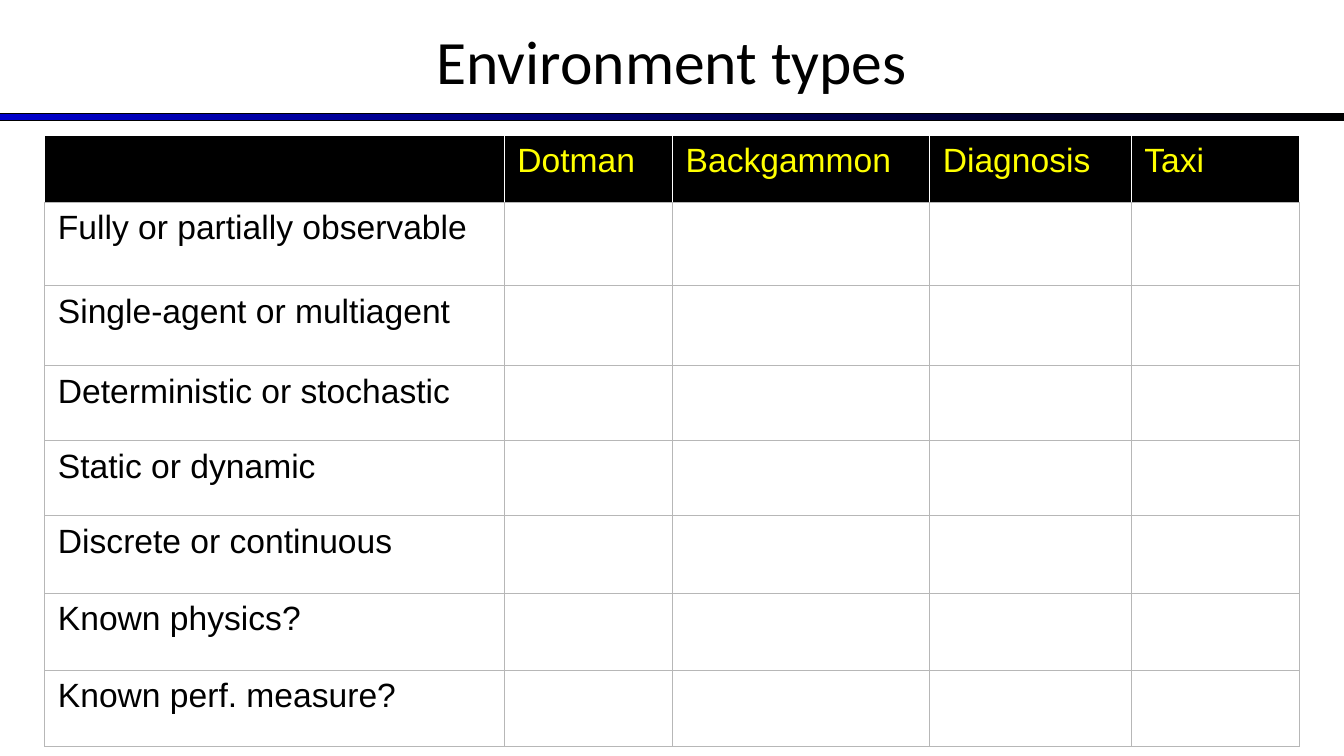
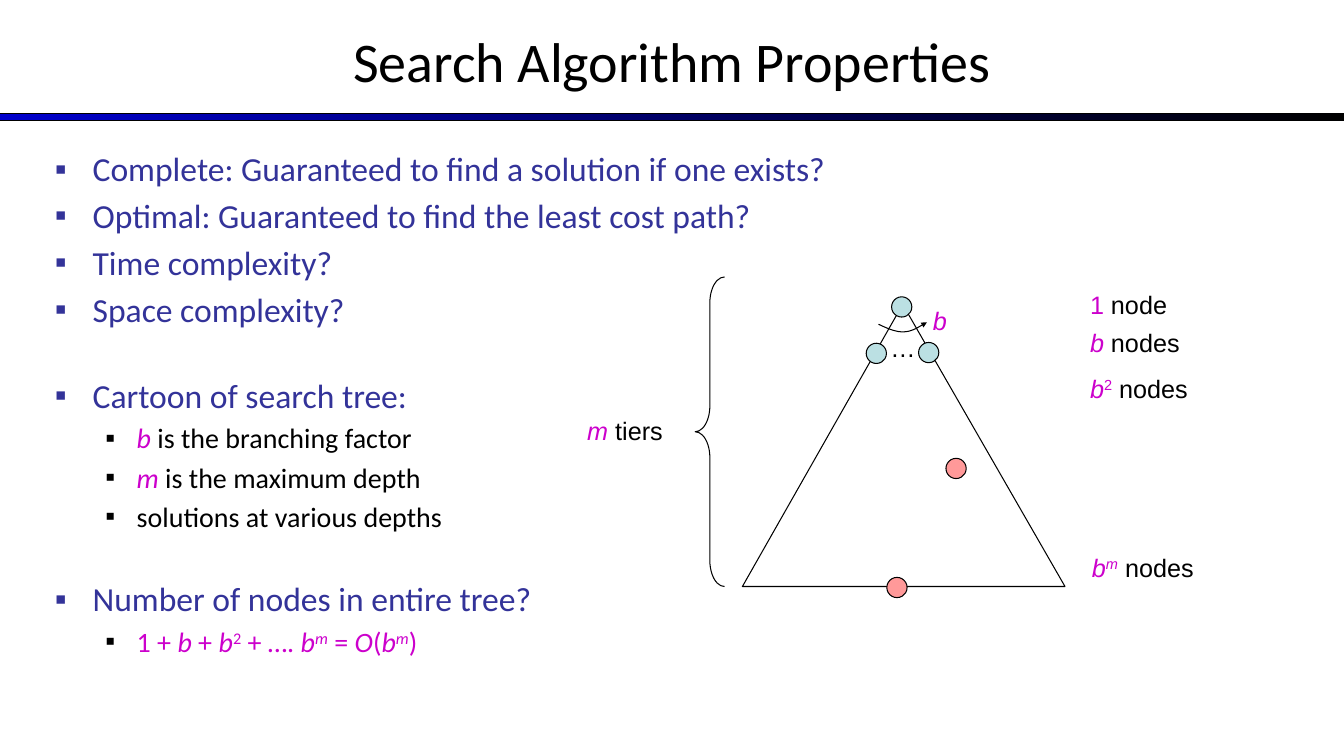
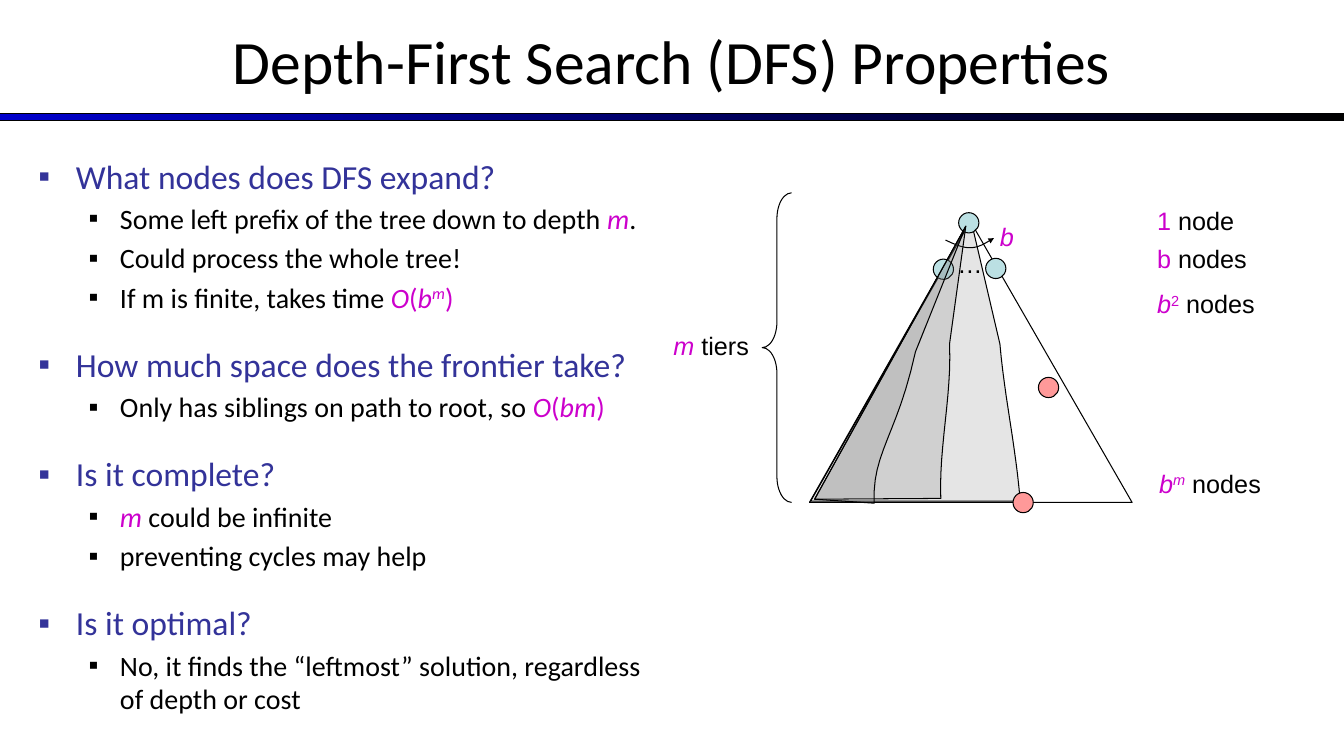
from lxml.etree import SubElement
from pptx import Presentation
from pptx.dml.color import RGBColor
from pptx.enum.shapes import MSO_SHAPE
from pptx.enum.text import MSO_ANCHOR, MSO_AUTO_SIZE, PP_ALIGN
from pptx.oxml.ns import qn
from pptx.util import Cm, Pt

COLORS = {
    "black": "000000", "white": "FFFFFF", "band": "0000CC", "grid": "B7B7B7",
    "header": "FFFF00", "heading": "333399", "math": "CC00CC",
    "node": "BBE0E3", "goal": "FF9999", "shade": "808080",
}
SLIDE_W, SLIDE_H = 33.87, 19.05

# Table: lengths in cm
TABLE_AT = (1.13, 3.41)
COLUMNS = [("", 11.58), ("Dotman", 4.24), ("Backgammon", 6.48),
           ("Diagnosis", 5.08), ("Taxi", 4.23)]
HEADER_H = 1.69
ROWS = [
    ("Fully or partially observable", 2.1),
    ("Single-agent or multiagent", 2.01),
    ("Deterministic or stochastic", 1.89),
    ("Static or dynamic", 1.89),
    ("Discrete or continuous", 1.96),
    ("Known physics?", 1.94),
    ("Known perf. measure?", 1.93),
]

# A run is plain text or (text, flags): m = math colour, i = italic, s = superscript
B, M = ("b", "mi"), ("m", "mi")
SQUARED, TO_THE_M = ("2", "ms"), ("m", "mis")
BIG_O, OPEN, CLOSE = ("O", "mi"), ("(", "m"), (")", "m")

# Lists: groups of (level, runs)
SEARCH_LIST = [
    [(0, ["Complete: Guaranteed to find a solution if one exists?"]),
     (0, ["Optimal: Guaranteed to find the least cost path?"]),
     (0, ["Time complexity?"]),
     (0, ["Space complexity?"])],
    [(0, ["Cartoon of search tree:"]),
     (1, [B, " is the branching factor"]),
     (1, [M, " is the maximum depth"]),
     (1, ["solutions at various depths"])],
    [(0, ["Number of nodes in entire tree?"]),
     (1, [("1 + ", "m"), B, (" + ", "m"), B, SQUARED, (" + …. ", "m"), B, TO_THE_M,
          (" = ", "m"), BIG_O, OPEN, B, TO_THE_M, CLOSE])],
]
DFS_LIST = [
    [(0, ["What nodes does DFS expand?"]),
     (1, ["Some left prefix of the tree down to depth ", M, "."]),
     (1, ["Could process the whole tree!"]),
     (1, ["If m is finite, takes time ", BIG_O, OPEN, B, TO_THE_M, CLOSE])],
    [(0, ["How much space does the frontier take?"]),
     (1, ["Only has siblings on path to root, so ", BIG_O, OPEN, ("bm", "mi"), CLOSE])],
    [(0, ["Is it complete?"]),
     (1, [M, " could be infinite"]),
     (1, ["preventing cycles may help"])],
    [(0, ["Is it optimal?"]),
     (1, ["No, it finds the “leftmost” solution, regardless of depth or cost"])],
]
LEVELS = [
    {"size": 24, "color": "heading", "left": 0.95, "hang": 0.95, "before": 4.7},
    {"size": 20, "color": "black", "left": 2.06, "hang": 0.79, "before": 4.1},
]

# Tree: cm from the top left corner of its brace.
# An outline step is one point (line) or three points (Bézier curve).
TREE_H = 7.8
NODE_D = 0.51
TRIANGLE = [((1.19, TREE_H),), ((9.32, TREE_H),), ((5.23, 0.69),)]
BRANCH_ARC = [((4.62, 1.19),),
              ((4.85, 1.3), (5.08, 1.4), (5.28, 1.38)),
              ((5.49, 1.37), (5.66, 1.24), (5.84, 1.14))]
NODES = [(4.95, 0.5), (4.31, 1.67), (5.63, 1.65)]
TREE_LABELS = [
    (4.67, 1.27, 0.76, ["…"]),
    (5.74, 0.58, 0.84, [B]),
    (9.7, 0.18, 3.1, [("1", "m"), " node"]),
    (9.7, 2.29, 3.1, [B, SQUARED, " nodes"]),
    (9.75, 6.81, 4.06, [B, TO_THE_M, " nodes"]),
]
EXPANDED_BACK = [((1.22, 7.77),), ((6.5, 7.77),),
                 ((6.4, 6.45), (6.1, 5.11), (5.99, 3.81)), ((5.26, 0.69),)]
EXPANDED_FRONT = [
    [((1.32, 7.72),), ((4.5, 7.7),),
     ((4.45, 6.4), (4.78, 5.11), (4.72, 3.81)), ((5.13, 0.84),)],
    [((1.32, 7.72),), ((2.82, 7.82),),
     ((2.77, 6.53), (3.4, 6.12), (3.86, 4.01)), ((5.13, 0.84),)],
]


def rgb(name):
    return RGBColor.from_string(COLORS[name])


def box(*lengths):
    return [Cm(v) for v in lengths]


def write(p, runs, font, size, color):
    for run in runs:
        text, flags = (run, "") if isinstance(run, str) else run
        r = p.add_run()
        r.text = text
        style = {"name": font, "size": Pt(size), "bold": False, "italic": "i" in flags}
        for key, value in style.items():
            setattr(r.font, key, value)
        r.font.color.rgb = rgb("math" if "m" in flags else color)
        if "s" in flags:
            r.font._element.set("baseline", "30000")


def outline(sp, fill=None):
    """Give a shape a thin black line, a plain fill or none, and no shadow."""
    sp.shadow.inherit = False
    sp.line.color.rgb = rgb("black")
    sp.line.width = Pt(0.75)
    if fill:
        sp.fill.solid()
        sp.fill.fore_color.rgb = rgb(fill)
    else:
        sp.fill.background()
    return sp


def add_slide(prs, layout, title, size):
    """Add a slide with the shared gradient band and title."""
    slide = prs.slides.add_slide(prs.slide_layouts[layout])
    band = outline(slide.shapes.add_shape(MSO_SHAPE.RECTANGLE, *box(0, 2.86, SLIDE_W, 0.18)))
    band.fill.gradient()
    band.fill.gradient_angle = 0
    for stop, name, position in zip(band.fill.gradient_stops, ("band", "black"), (0, 1)):
        stop.color.rgb = rgb(name)
        stop.position = position

    sp = slide.shapes.title
    place(sp, 0, -0.08, SLIDE_W, 3.18)
    tf = sp.text_frame
    tf.auto_size = MSO_AUTO_SIZE.NONE
    tf.vertical_anchor = MSO_ANCHOR.MIDDLE
    tf.paragraphs[0].alignment = PP_ALIGN.CENTER
    write(tf.paragraphs[0], [title], "Calibri", size, "black")
    return slide


def place(sp, *lengths):
    for key, value in zip(("left", "top", "width", "height"), box(*lengths)):
        setattr(sp, key, value)


def set_bullet(p, level):
    pPr = p._p.get_or_add_pPr()
    pPr.set("marL", str(Cm(level["left"])))
    pPr.set("indent", str(-Cm(level["hang"])))
    color = SubElement(pPr, qn("a:buClr"))
    SubElement(color, qn("a:srgbClr"), val=COLORS[level["color"]])
    SubElement(pPr, qn("a:buFont"), typeface="Arial")
    SubElement(pPr, qn("a:buChar"), char="▪")


def fill_body(slide, at, groups, gap):
    """Write the bullet list, with gap points above every group but the first."""
    sp = slide.placeholders[1]
    place(sp, *at)
    tf = sp.text_frame
    tf.auto_size = MSO_AUTO_SIZE.NONE
    tf.vertical_anchor = MSO_ANCHOR.TOP
    p = tf.paragraphs[0]
    for g, group in enumerate(groups):
        for i, (depth, runs) in enumerate(group):
            if g or i:
                p = tf.add_paragraph()
            level = LEVELS[depth]
            p.level = depth
            p.space_before = Pt(gap if g and not i else level["before"])
            set_bullet(p, level)
            write(p, runs, "Calibri", level["size"], level["color"])


def set_borders(cell, sides):
    tcPr = cell._tc.get_or_add_tcPr()
    for side in "LRTB":
        ln = SubElement(tcPr, qn(f"a:ln{side}"), w=str(Pt(0.75)))
        SubElement(SubElement(ln, qn("a:solidFill")), qn("a:srgbClr"), val=COLORS[sides[side]])


def add_environment_table(slide):
    heights = [HEADER_H] + [h for _, h in ROWS]
    widths = [w for _, w in COLUMNS]
    table = slide.shapes.add_table(
        len(heights), len(widths), *box(*TABLE_AT, sum(widths), sum(heights))).table
    table.first_row = table.horz_banding = False
    for column, w in zip(table.columns, widths):
        column.width = Cm(w)
    for row, h in zip(table.rows, heights):
        row.height = Cm(h)

    texts = [[name for name, _ in COLUMNS]]
    texts += [[name] + [""] * (len(widths) - 1) for name, _ in ROWS]
    margins = {"margin_left": 0.33, "margin_right": 0.33,
               "margin_top": 0.18, "margin_bottom": 0.18}
    for y, row in enumerate(texts):
        for x, text in enumerate(row):
            cell = table.cell(y, x)
            for key, value in margins.items():
                setattr(cell, key, Cm(value))
            sides = dict.fromkeys("LRTB", "grid")
            if y == 0:
                sides.update(dict.fromkeys("LRT", "white"))
            set_borders(cell, sides)
            if y == 0:
                cell.fill.solid()
                cell.fill.fore_color.rgb = rgb("black")
            else:
                cell.fill.background()
            if text:
                write(cell.text_frame.paragraphs[0], [text], "Arial", 24,
                      "black" if y else "header")


def flatten(steps, pieces=12):
    """Turn outline steps into points, cutting each curve into short lines."""
    points = []
    for step in steps:
        if len(step) == 1:
            points.append(step[0])
            continue
        curve = (points[-1], *step)
        for k in range(1, pieces + 1):
            t = k / pieces
            weights = ((1 - t) ** 3, 3 * t * (1 - t) ** 2, 3 * t * t * (1 - t), t ** 3)
            points.append(tuple(sum(w * pt[axis] for w, pt in zip(weights, curve))
                                for axis in (0, 1)))
    return points


def add_outline(slide, origin, steps, fill=None, close=True):
    points = [box(origin[0] + x, origin[1] + y) for x, y in flatten(steps)]
    builder = slide.shapes.build_freeform(*points[0])
    builder.add_line_segments(points[1:], close=close)
    return outline(builder.convert_to_shape(), fill)


def add_expanded(slide, origin, steps):
    sp = add_outline(slide, origin, steps, "shade")
    color = sp._element.spPr.find(qn("a:solidFill")).find(qn("a:srgbClr"))
    SubElement(color, qn("a:alpha"), val="20000")


def add_circle(slide, origin, at, fill):
    x, y = origin[0] + at[0], origin[1] + at[1]
    outline(slide.shapes.add_shape(MSO_SHAPE.OVAL, *box(x, y, NODE_D, NODE_D)), fill)


def add_tree(slide, origin, goals, tiers_x, second_tier):
    left, top = origin
    add_outline(slide, origin, TRIANGLE)
    for at in NODES:
        add_circle(slide, origin, at, "node")
    arc = add_outline(slide, origin, BRANCH_ARC, close=False)
    SubElement(arc.line._get_or_add_ln(), qn("a:tailEnd"), type="triangle", w="sm", len="sm")

    labels = TREE_LABELS + [(9.7, 1.15, 3.1, [second_tier, " nodes"]),
                            (tiers_x, 3.35, 3.5, [M, " tiers"])]
    for x, y, w, runs in labels:
        tf = slide.shapes.add_textbox(*box(left + x, top + y, w, 1.02)).text_frame
        tf.word_wrap = True
        write(tf.paragraphs[0], runs, "Arial", 18, "black")

    for at in goals:
        add_circle(slide, origin, at, "goal")
    brace = outline(slide.shapes.add_shape(MSO_SHAPE.LEFT_BRACE, *box(left, top, 0.74, TREE_H)))
    brace.adjustments[0] = 0.88
    brace.adjustments[1] = 0.5


def main():
    prs = Presentation()
    prs.slide_width, prs.slide_height = box(SLIDE_W, SLIDE_H)

    add_environment_table(add_slide(prs, 5, "Environment types", 44))

    slide = add_slide(prs, 1, "Search Algorithm Properties", 40)
    fill_body(slide, (1.13, 3.61, 31.6, 13.13), SEARCH_LIST, gap=32.4)
    add_tree(slide, (17.52, 6.98), [(4.83, 7.57), (6.32, 4.57)], -2.97, B)

    slide = add_slide(prs, 1, "Depth-First Search (DFS) Properties", 44)
    fill_body(slide, (0.71, 3.79, 16.03, 13.13), DFS_LIST, gap=21.4)
    origin = (19.21, 4.86)
    add_expanded(slide, origin, EXPANDED_BACK)
    add_tree(slide, origin, [(6.32, 7.55), (6.96, 4.65)], -2.49, ("b", "m"))
    for steps in EXPANDED_FRONT:
        add_expanded(slide, origin, steps)

    prs.save("out.pptx")


if __name__ == "__main__":
    main()
